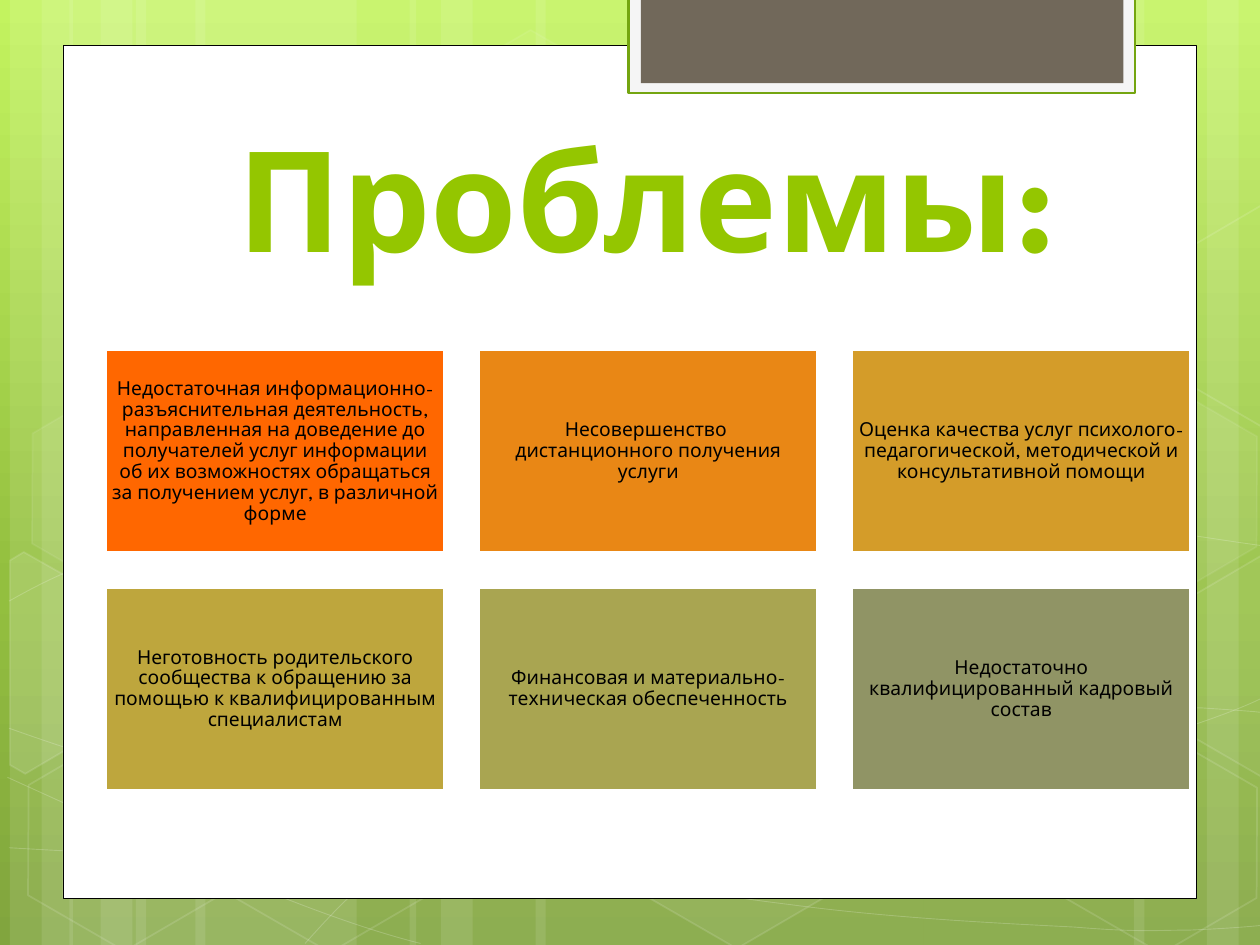
from copy import deepcopy
from pptx import Presentation
from pptx import util as u
from pptx.dml.color import RGBColor
from pptx.enum import shapes, text
from pptx.oxml.ns import qn
from lxml import etree

FONT = "League Spartan"
RECT = shapes.MSO_SHAPE.RECTANGLE
HEX = shapes.MSO_SHAPE.HEXAGON

deck = Presentation()
deck.slide_width, deck.slide_height = u.Cm(25.4), u.Cm(19.05)
slide = deck.slides.add_slide(deck.slide_layouts[5])
tree = slide.shapes


def tint(fill, color, alpha=100):
    """Fill with a solid hex colour, alpha in percent."""
    fill.solid()
    fill.fore_color.rgb = RGBColor.from_string(color)
    if alpha < 100:
        node = fill._xPr.find(qn("a:solidFill"))[0]
        etree.SubElement(node, qn("a:alpha")).set("val", str(alpha * 1000))


def style(shape, fill=None, alpha=100, line=None, width=1, fade=100):
    """Set fill and outline; None leaves that part empty."""
    shape.shadow.inherit = False
    if fill:
        tint(shape.fill, fill, alpha)
    else:
        shape.fill.background()
    if line:
        tint(shape.line.fill, line, fade)
        shape.line.width = u.Pt(width)
    else:
        shape.line.fill.background()


# Background gradient, light at the top
back = slide.background.fill
back.gradient()
back.gradient_angle = 270
stops = back.gradient_stops[0]._gs.getparent()
stops.append(deepcopy(stops[-1]))
for stop, (spot, color) in zip(back.gradient_stops,
                               [(0, "C3F35F"), (0.62, "93BF3F"), (1, "81A53E")]):
    stop.position = spot
    stop.color.rgb = RGBColor.from_string(color)

# Pale vertical bands: left, width
bands = [(2.74, 4.45), (0.2, 1.27), (0.84, 2.11), (3.94, 4.45),
         (1.4, 1.27), (2.03, 2.11), (18.62, 4.45), (24.33, 1.27),
         (22.86, 2.11), (10.8, 7.82), (8.26, 1.27), (8.89, 2.11)]
for x, w in bands:
    band = tree.add_shape(RECT, u.Cm(x), 0, u.Cm(w), deck.slide_height)
    style(band, "FFFFFF", 10)

# Thin waves: Bezier points, each segment sharing its end with the next
waves = [
    [(0.18, 17.09), (1.55, 17.17), (2.92, 17.25), (4.83, 17.22), (6.73, 17.2),
     (9.09, 17.15), (11.63, 16.89), (14.17, 16.64), (17.78, 16.15), (20.12, 15.67),
     (22.43, 15.19), (24.82, 14.43), (25.58, 14)],
    [(0.18, 12.12), (0.91, 11.71), (1.65, 11.33), (3.07, 10.95), (4.52, 10.57),
     (6.58, 10.01), (8.81, 9.83), (11.07, 9.65), (13.82, 9.63), (16.61, 9.83),
     (19.41, 10.03), (24.05, 10.82), (25.58, 11.02)],
    [(0.15, 15.67), (3.23, 17.07), (6.27, 18.47), (8.48, 19.02)],
    [(0.18, 14.68), (0.97, 14.96), (1.78, 15.24), (3.25, 15.65), (4.72, 16.03),
     (6.93, 16.66), (9.07, 17.09), (11.18, 17.53), (13.84, 17.98), (15.95, 18.24),
     (18.06, 18.52), (20.32, 18.62), (21.67, 18.69), (22.99, 18.8), (23.34, 18.75),
     (24, 18.75), (24.66, 18.72), (25.12, 18.69), (25.58, 18.64)],
    [(6.15, 19.02), (6.6, 18.52), (7.06, 18.01), (7.67, 17.55), (8.28, 17.09),
     (9.14, 16.59), (9.86, 16.23), (10.57, 15.88), (11, 15.72), (11.94, 15.47),
     (12.85, 15.21), (14.55, 14.86), (15.44, 14.68), (16.36, 14.5), (16.48, 14.5),
     (17.27, 14.45), (18.06, 14.38), (19.3, 14.3), (20.17, 14.27), (21.06, 14.25),
     (22.5, 14.27), (22.5, 14.27), (23, 14.27), (23.6, 14.27), (24.21, 14.27),
     (24.66, 14.3), (25.1, 14.33), (25.32, 14.35), (25.55, 14.38), (25.48, 14.35),
     (25.55, 14.38)],
]
for wave in waves:
    dots = [(u.Cm(x), u.Cm(y)) for x, y in wave]
    pen = tree.build_freeform(*dots[0])
    pen.add_line_segments(dots[1:], close=False)
    curve = pen.convert_to_shape()
    style(curve, line="FFFFFF", width=0.5, fade=20)
    # Join every three straight steps into one Bezier segment
    steps = list(curve.element.iter(qn("a:lnTo")))
    route = steps[0].getparent()
    for i in range(0, len(steps), 3):
        bend = etree.SubElement(route, qn("a:cubicBezTo"))
        for step in steps[i:i + 3]:
            bend.append(step[0])
            route.remove(step)

# Tilted hexagons: left, top, fill alpha (0 is empty), line alpha
cells = [(8.48, 0.91, 4, 8), (12.62, 14.96, 6, 12), (0.28, 15.01, 0, 12),
         (0.36, 7.92, 7, 8), (4.42, 15.04, 0, 12), (19.13, 11.51, 10, 12),
         (21.18, 15.06, 0, 12), (21.18, 7.98, 7, 8)]
for x, y, alpha, fade in cells:
    cell = tree.add_shape(HEX, u.Cm(x), u.Cm(y), u.Cm(4.45), u.Cm(3.86))
    cell.adjustments[0] = 0.285
    cell.rotation = 30
    style(cell, "FFFFFF" if alpha else None, alpha, "FFFFFF", 1, fade)

# Hexagons cut off by the slide edge: corners, fill alpha
cuts = [
    ([(0.2, 11.3), (0.48, 11.13), (2.44, 12.24), (2.41, 14.48), (0.51, 15.6),
      (0.2, 15.42)], 10),
    ([(23.52, 12.32), (25.43, 11.2), (25.63, 11.33), (25.63, 15.57), (25.45, 15.67),
      (23.52, 14.55)], 4),
    ([(23.52, 5.26), (25.43, 4.14), (25.65, 4.27), (25.63, 8.51), (25.45, 8.61),
      (23.52, 7.49)], 0),
]
for ends, alpha in cuts:
    dots = [(u.Cm(x), u.Cm(y)) for x, y in ends]
    pen = tree.build_freeform(*dots[0])
    pen.add_line_segments(dots[1:], close=True)
    style(pen.convert_to_shape(), "FFFFFF" if alpha else None, alpha, "FFFFFF", 1, 12)

# White page and the tab at the top
for x, y, w, h, fill, line, width in [
        (1.27, 0.91, 22.86, 17.2, "FFFFFF", "000000", 0.5),
        (12.67, -0.05, 10.21, 1.93, "F5F5F5", "74A510", 1.25),
        (12.92, -0.05, 9.73, 1.73, "71685A", None, 0)]:
    panel = tree.add_shape(RECT, u.Cm(x), u.Cm(y), u.Cm(w), u.Cm(h))
    style(panel, fill, line=line, width=width)

# Title, raised above the page
title = tree.title
tree.element.append(title.element)
title.left, title.top = u.Cm(1.36), u.Cm(1.61)
title.width, title.height = u.Cm(23.34), u.Cm(4.17)
frame = title.text_frame
frame.text = "Проблемы:"
frame.auto_size = text.MSO_AUTO_SIZE.NONE
frame.vertical_anchor = text.MSO_ANCHOR.BOTTOM
para = frame.paragraphs[0]
para.alignment = text.PP_ALIGN.CENTER
font = para.runs[0].font
font.name, font.size, font.bold = FONT, u.Pt(80), True
tint(font.fill, "94C600")

# Problem cards, three to a row
cards = [
    ("FF6700", "Недостаточная информационно-разъяснительная деятельность, "
               "направленная на доведение до получателей услуг информации об их "
               "возможностях обращаться за получением услуг, в различной форме"),
    ("E98715", "Несовершенство  дистанционного получения услуги"),
    ("D49C29", "Оценка качества услуг психолого-педагогической, методической "
               "и консультативной помощи"),
    ("BEA63D", "Неготовность родительского сообщества к обращению за помощью "
               "к квалифицированным специалистам"),
    ("A9A551", "Финансовая и материально-техническая обеспеченность"),
    ("909465", "Недостаточно квалифицированный кадровый состав"),
]
for i, (color, words) in enumerate(cards):
    row, col = divmod(i, 3)
    card = tree.add_shape(RECT, u.Cm(2.13 + 7.52 * col), u.Cm(7.05 + 4.79 * row),
                          u.Cm(6.84), u.Cm(4.1))
    style(card, color, line="FFFFFF", width=1.75)
    frame = card.text_frame
    frame.text = words
    frame.word_wrap = True
    frame.vertical_anchor = text.MSO_ANCHOR.MIDDLE
    frame.margin_left = frame.margin_right = u.Cm(0.12)
    frame.margin_top = frame.margin_bottom = u.Cm(0.12)
    para = frame.paragraphs[0]
    para.alignment = text.PP_ALIGN.CENTER
    para.line_spacing = 0.9
    font = para.runs[0].font
    font.name, font.size = FONT, u.Pt(11)
    tint(font.fill, "000000")

deck.save("out.pptx")
